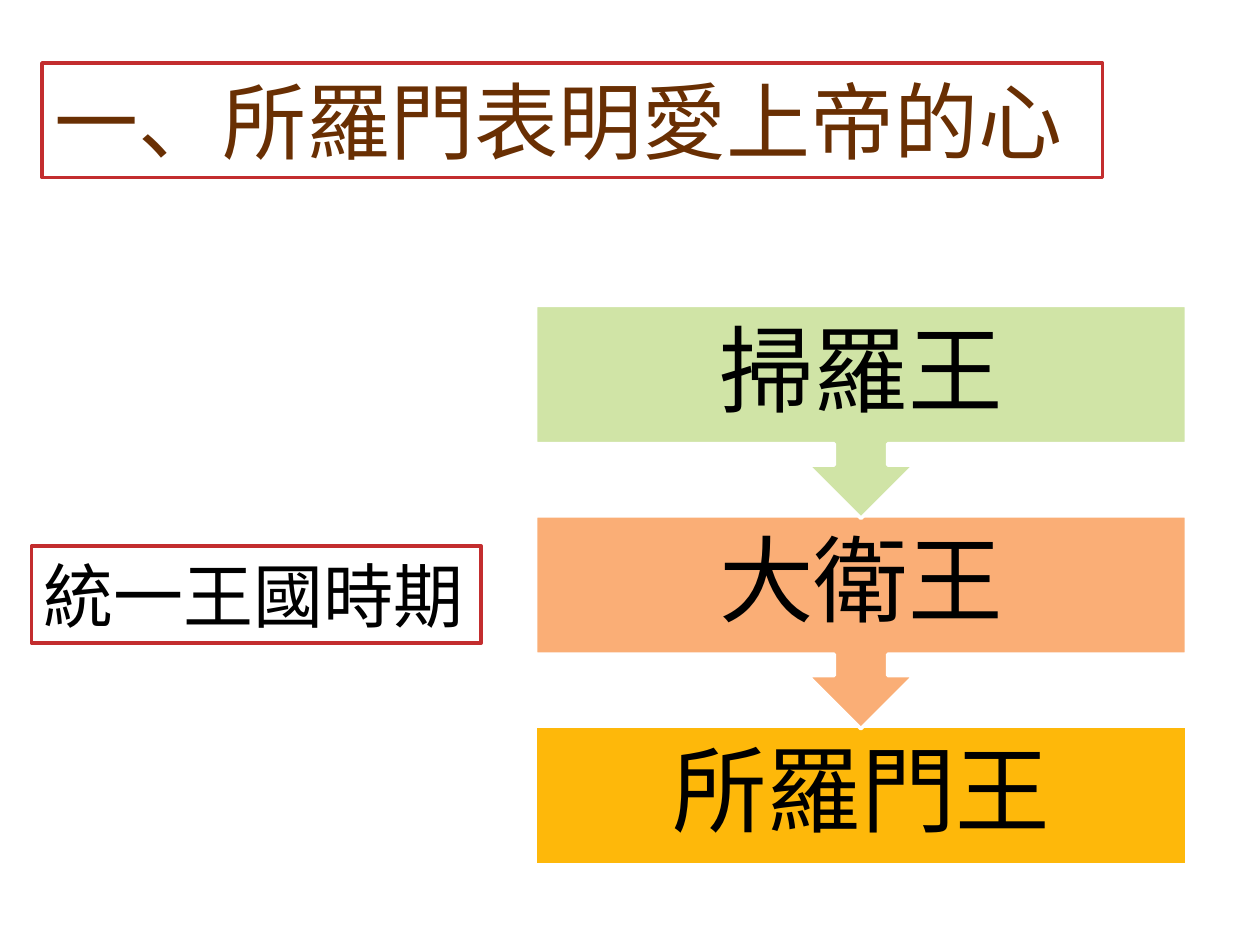
from pptx import Presentation
from pptx.dml.color import RGBColor
from pptx.enum.shapes import MSO_SHAPE
from pptx.enum.text import MSO_ANCHOR, MSO_AUTO_SIZE, PP_ALIGN
from pptx.util import Pt

FONT = "Calibri"
RED, WHITE, BLACK, BROWN = "C32D2E", "FFFFFF", "000000", "692F03"
KINGS = [("掃羅王", "D0E4A6"), ("大衛王", "FAAE76"), ("所羅門王", "FEB80A")]


def color(value):
    return RGBColor.from_string(value)


def paint(shape, fill, line):
    shape.fill.solid()
    shape.fill.fore_color.rgb = color(fill)
    shape.line.color.rgb = color(line)
    shape.line.width = Pt(2)


def write(shape, text, size, text_color, align=PP_ALIGN.LEFT, anchor=MSO_ANCHOR.MIDDLE):
    frame = shape.text_frame
    frame.text = text
    frame.vertical_anchor = anchor
    para = frame.paragraphs[0]
    para.alignment = align
    font = para.runs[0].font
    font.name = FONT
    font.size = Pt(size)
    font.color.rgb = color(text_color)
    return para


def place_title(page, left, top, width, height):
    title = page.shapes.title
    title.left, title.top = Pt(left), Pt(top)
    title.width, title.height = Pt(width), Pt(height)
    paint(title, WHITE, RED)
    write(title, "一、所羅門表明愛上帝的心", 48, BROWN)
    title.text_frame.auto_size = MSO_AUTO_SIZE.NONE


def add_period_label(page, left, top, width, height):
    label = page.shapes.add_textbox(Pt(left), Pt(top), Pt(width), Pt(height))
    paint(label, WHITE, RED)
    write(label, "統一王國時期", 40, BLACK, anchor=MSO_ANCHOR.TOP)
    label.text_frame.word_wrap = False


def add_king_sequence(page, left, top, width, height):
    """Stack the kings; every box but the last points down to the next."""
    bar_height, callout_height = 79, 121.7
    step = (height - bar_height) / (len(KINGS) - 1)
    group = page.shapes.add_group_shape()
    for index, (name, fill) in reversed(list(enumerate(KINGS))):
        is_last = index == len(KINGS) - 1
        preset = MSO_SHAPE.RECTANGLE if is_last else MSO_SHAPE.DOWN_ARROW_CALLOUT
        box = group.shapes.add_shape(
            preset, Pt(left), Pt(top + index * step), Pt(width),
            Pt(bar_height if is_last else callout_height))
        box.shadow.inherit = False
        paint(box, fill, WHITE)
        para = write(box, name, 54, BLACK, PP_ALIGN.CENTER)
        para.line_spacing = 0.9
        frame = box.text_frame
        frame.margin_left = frame.margin_right = Pt(30)
        frame.margin_top = frame.margin_bottom = 0


def main():
    deck = Presentation()
    deck.slide_width, deck.slide_height = Pt(720), Pt(540)
    page = deck.slides.add_slide(deck.slide_layouts[5])
    place_title(page, 24, 36, 606, 65.5)
    add_period_label(page, 18, 312, 257, 55.5)
    add_king_sequence(page, 306, 174.5, 372, 319.5)
    deck.save("out.pptx")


if __name__ == "__main__":
    main()
